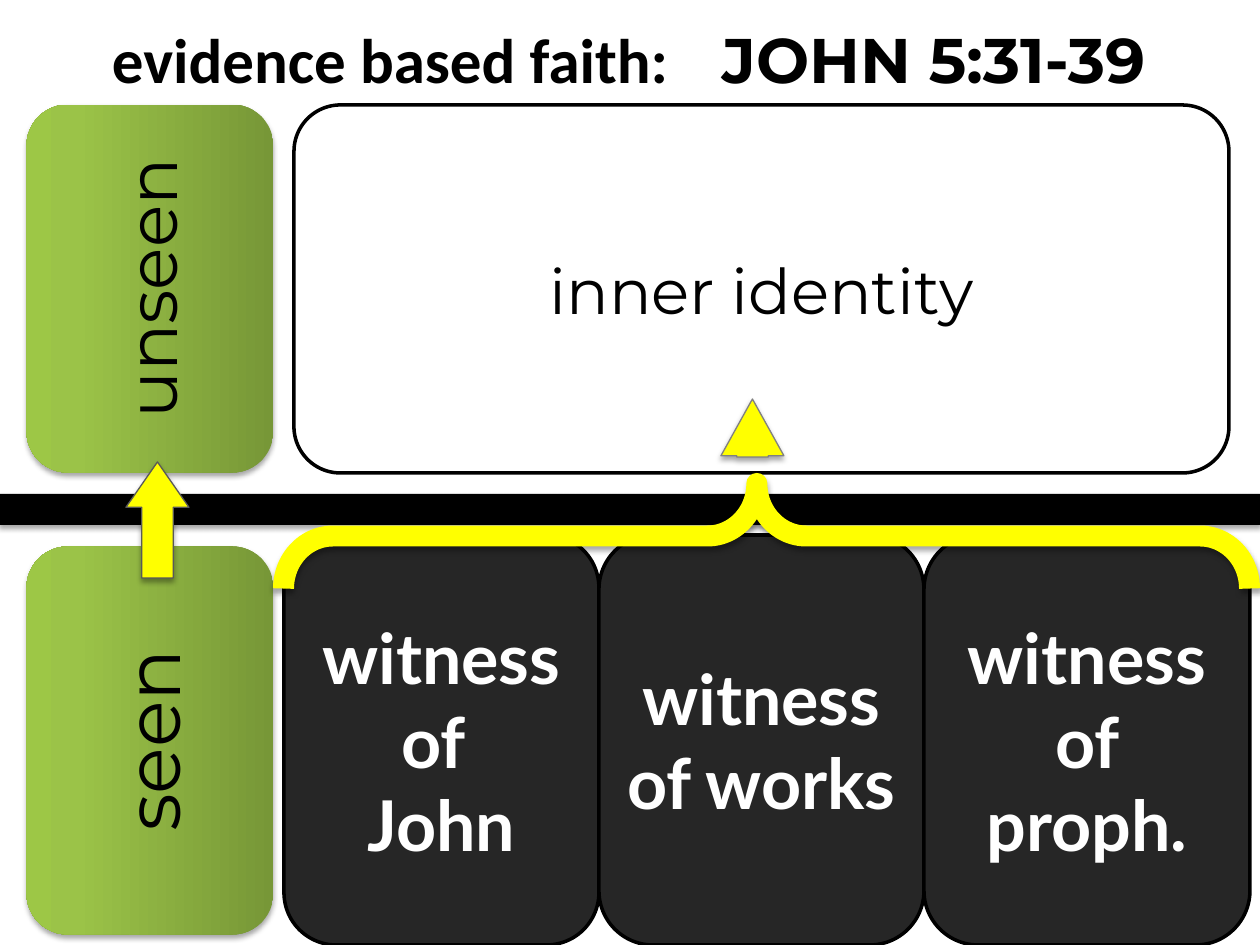
from copy import deepcopy

from lxml import etree
from pptx import Presentation
from pptx.dml.color import RGBColor
from pptx.enum.shapes import MSO_SHAPE
from pptx.enum.text import MSO_ANCHOR, PP_ALIGN
from pptx.oxml import parse_xml
from pptx.oxml.ns import nsdecls, qn
from pptx.util import Emu, Pt

PX = 914400 / 126  # EMU in one px

BLACK = RGBColor(0x00, 0x00, 0x00)
WHITE = RGBColor(0xFF, 0xFF, 0xFF)
CHARCOAL = RGBColor(0x26, 0x26, 0x26)
YELLOW = RGBColor(0xFF, 0xFF, 0x00)
DARK_GRAY = RGBColor(0x59, 0x59, 0x59)
GRAY = RGBColor(0x80, 0x80, 0x80)
GREEN_STOPS = [
    (0, RGBColor(0x77, 0x97, 0x37)),
    (0.8, RGBColor(0x9B, 0xC3, 0x48)),
    (1, RGBColor(0x9D, 0xC7, 0x46)),
]

WITNESS_FORMAT = {"name": "Lato", "size": Pt(40), "bold": True}
IDENTITY_FORMAT = {"name": "Montserrat", "size": Pt(36), "bold": False}
UNSEEN_FORMAT = {"name": "Montserrat", "size": Pt(40), "bold": False}
SEEN_FORMAT = {"name": "Montserrat", "size": Pt(44), "bold": False}

SHADOW_XML = (
    f'<a:outerShdw {nsdecls("a")} blurRad="39370" dist="22860" dir="5400000" '
    'rotWithShape="0"><a:srgbClr val="000000"><a:alpha val="35000"/>'
    "</a:srgbClr></a:outerShdw>"
)


def px(length):
    return Emu(round(length * PX))


def set_format(font, values, color):
    for attribute, value in values.items():
        setattr(font, attribute, value)
    font.color.rgb = color


def add_block(slide, kind, box, fill=None, line=None, shadow=False, adjust=(), rotation=0):
    """Add a preset shape; line is a (color, points) pair."""
    shape = slide.shapes.add_shape(kind, *map(px, box))
    shape.rotation = rotation
    for index, value in enumerate(adjust):
        shape.adjustments[index] = value
    if fill is None:
        shape.fill.background()
    else:
        shape.fill.solid()
        shape.fill.fore_color.rgb = fill
    if line is None:
        shape.line.fill.background()
    else:
        shape.line.color.rgb = line[0]
        shape.line.width = Pt(line[1])
    shape.shadow.inherit = False
    if shadow:
        effects = shape._element.spPr.find(qn("a:effectLst"))
        effects.append(parse_xml(SHADOW_XML))
    return shape


def add_label(shape, lines, values, color):
    frame = shape.text_frame
    frame.word_wrap = True
    frame.vertical_anchor = MSO_ANCHOR.MIDDLE
    frame.text = "\n".join(lines)
    for paragraph in frame.paragraphs:
        paragraph.alignment = PP_ALIGN.CENTER
        set_format(paragraph.runs[0].font, values, color)


def fill_green(shape):
    fill = shape.fill
    fill.gradient()
    fill.gradient_angle = 90
    stop_list = shape._element.spPr.find(".//" + qn("a:gsLst"))
    stop_list.append(deepcopy(stop_list[-1]))
    for stop, (position, color) in zip(fill.gradient_stops, GREEN_STOPS):
        stop.position = position
        stop.color.rgb = color


def add_side_panel(slide, box, label, values):
    panel = add_block(slide, MSO_SHAPE.ROUNDED_RECTANGLE, box, shadow=True, rotation=270)
    fill_green(panel)
    add_label(panel, [label], values, BLACK)


def add_title(slide):
    frame = slide.shapes.add_textbox(px(112), px(21), px(1060), px(77)).text_frame
    frame.word_wrap = True
    for side in ("left", "right", "top", "bottom"):
        setattr(frame, f"margin_{side}", 0)
    paragraph = frame.paragraphs[0]
    # The tab stop sets the gap before the reference
    tabs = etree.SubElement(paragraph._p.get_or_add_pPr(), qn("a:tabLst"))
    etree.SubElement(tabs, qn("a:tab"), pos=str(px(610)), algn="l")
    for text, name in (("evidence based faith:\t", "Calibri"), ("JOHN 5:31-39", "Montserrat")):
        run = paragraph.add_run()
        run.text = text
        set_format(run.font, {"name": name, "size": Pt(36), "bold": True}, BLACK)


def add_witnesses(slide):
    edges = [284, 599, 924, 1250]
    labels = [["witness of ", "John"], ["witness of works"], ["witness of proph."]]
    for left, right, lines in zip(edges, edges[1:], labels):
        card = add_block(slide, MSO_SHAPE.ROUNDED_RECTANGLE, (left, 535, right - left, 410),
                         CHARCOAL, (BLACK, 2))
        add_label(card, lines, WITNESS_FORMAT, WHITE)


def main():
    presentation = Presentation()
    presentation.slide_width = px(1260)
    presentation.slide_height = px(945)
    slide = presentation.slides.add_slide(presentation.slide_layouts[6])

    add_title(slide)

    # Band between the unseen and the seen
    add_block(slide, MSO_SHAPE.RECTANGLE, (0, 494, 1260, 31), BLACK, shadow=True)

    # Unseen row
    add_side_panel(slide, (-34, 165, 368, 247), "unseen", UNSEEN_FORMAT)
    identity = add_block(slide, MSO_SHAPE.ROUNDED_RECTANGLE, (294, 105, 935, 368),
                         WHITE, (BLACK, 2), adjust=(0.126,))
    add_label(identity, ["inner identity"], IDENTITY_FORMAT, BLACK)

    # Seen row
    add_witnesses(slide)
    add_side_panel(slide, (-44, 617, 388, 247), "seen", SEEN_FORMAT)

    # Arrows and brace leading from the seen to the unseen
    add_block(slide, MSO_SHAPE.UP_ARROW, (126, 462, 63, 116), YELLOW,
              (DARK_GRAY, 0.75), True, (0.5, 0.72))
    add_block(slide, MSO_SHAPE.LEFT_BRACE, (714, 53, 105, 966), None,
              (YELLOW, 12), True, (0.47, 0.51), 90)
    add_block(slide, MSO_SHAPE.UP_ARROW, (721, 399, 63, 58), YELLOW,
              (GRAY, 0.75), True, (0.5, 0.98))

    presentation.save("out.pptx")


if __name__ == "__main__":
    main()
